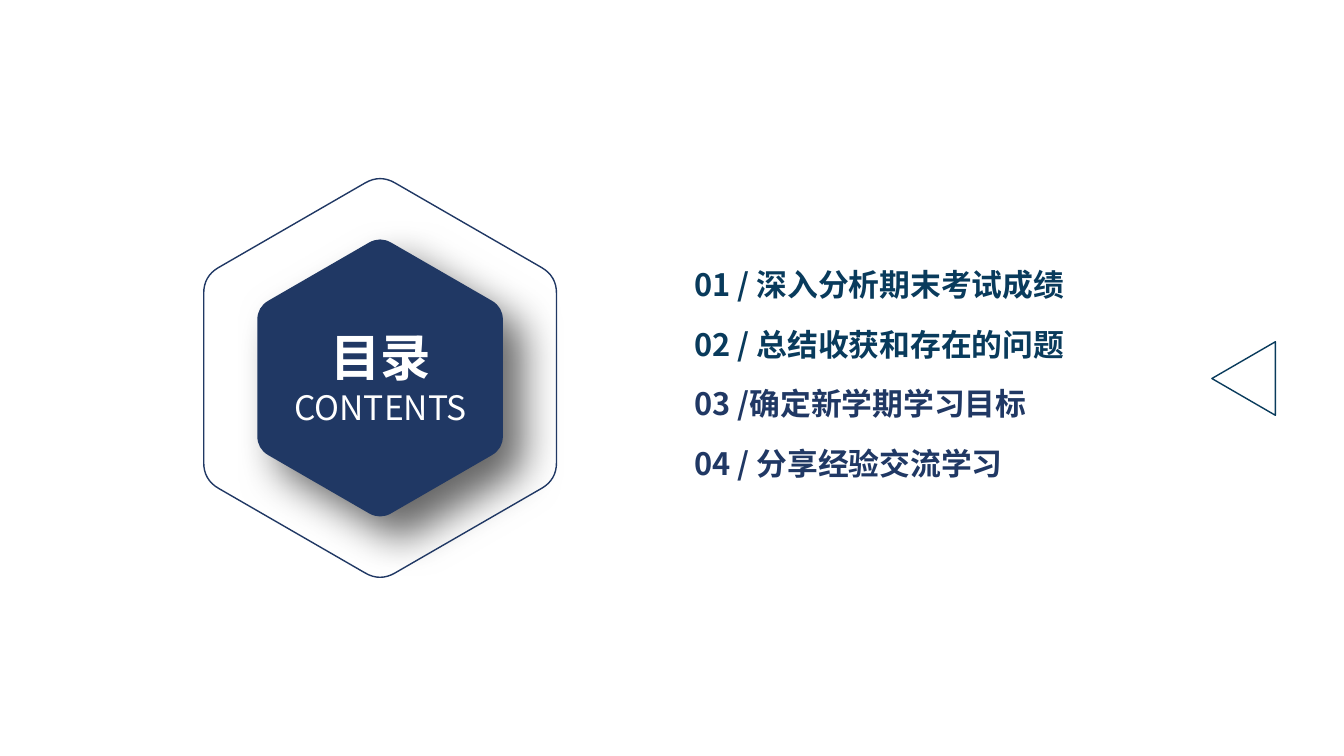
"""Build a contents slide with a hexagon badge and four numbered topics."""
from math import cos, radians, sin

from lxml.etree import SubElement
from pptx import Presentation
from pptx.dml.color import RGBColor
from pptx.enum.shapes import MSO_SHAPE
from pptx.enum.text import MSO_AUTO_SIZE, PP_ALIGN
from pptx.oxml.ns import qn
from pptx.util import Pt

PX = 9144
FONT = "Noto Sans CJK SC"
COLORS = {"navy": "203864", "teal": "093B5C", "white": "FFFFFF", "black": "000000"}
TOPICS = [
    ("01 / 深入分析期末考试成绩", 408, "teal"),
    ("02 / 总结收获和存在的问题", 558, "teal"),
    ("03 /确定新学期学习目标", 397, "navy"),
    ("04 / 分享经验交流学习", 408, "navy"),
]


def color(name):
    return RGBColor.from_string(COLORS[name])


def add_text(slide, box, lines, align=PP_ALIGN.LEFT):
    shape = slide.shapes.add_textbox(*(length * PX for length in box))
    frame = shape.text_frame
    frame.word_wrap = True
    frame.auto_size = MSO_AUTO_SIZE.SHAPE_TO_FIT_TEXT
    for index, (text, size, bold, color_name) in enumerate(lines):
        paragraph = frame.add_paragraph() if index else frame.paragraphs[0]
        paragraph.text = text
        paragraph.alignment = align
        font = paragraph.font
        font.name, font.size, font.bold = FONT, Pt(size), bold
        font.color.rgb = color(color_name)
        properties = paragraph._p.pPr.find(qn("a:defRPr"))
        SubElement(properties, qn("a:ea"), typeface=FONT)


def style_outline(shape, line_name, width, fill_name=None):
    shape.shadow.inherit = False
    shape.line.color.rgb = color(line_name)
    shape.line.width = Pt(width)
    if fill_name:
        shape.fill.solid()
        shape.fill.fore_color.rgb = color(fill_name)
    else:
        shape.fill.background()


def toward(start, end, share):
    return tuple(a + (b - a) * share for a, b in zip(start, end))


def curve_corners(shape):
    outline = next(shape._element.iter(qn("a:path")))
    segments = outline.findall(qn("a:lnTo"))
    for first in range(0, len(segments), 4):
        curve = outline.makeelement(qn("a:cubicBezTo"))
        segments[first].addprevious(curve)
        for segment in segments[first:first + 3]:
            curve.append(segment[0])
            outline.remove(segment)


def add_hexagon(slide, center, radius, trim):
    angles = [radians(60 * corner - 90) for corner in range(6)]
    corners = [(center[0] + radius * cos(a), center[1] + radius * sin(a)) for a in angles]
    points = []
    for index, corner in enumerate(corners):
        before, after = corners[index - 1], corners[(index + 1) % 6]
        share = trim / radius
        points += [
            toward(corner, before, share), toward(corner, before, share / 3),
            toward(corner, after, share / 3), toward(corner, after, share),
        ]
    points = [(round(x * PX), round(y * PX)) for x, y in points]
    builder = slide.shapes.build_freeform(*points[0])
    builder.add_line_segments(points[1:], close=True)
    shape = builder.convert_to_shape()
    curve_corners(shape)
    return shape


def add_shadow(shape, blur, distance, angle, opacity):
    effects = shape._element.spPr.find(qn("a:effectLst"))
    shadow = SubElement(
        effects, qn("a:outerShdw"), blurRad=str(Pt(blur)), dist=str(Pt(distance)),
        dir=str(angle * 60000), algn="tl", rotWithShape="0",
    )
    tint = SubElement(shadow, qn("a:srgbClr"), val=COLORS["black"])
    SubElement(tint, qn("a:alpha"), val=str(opacity * 1000))


def add_triangle(slide, box):
    shape = slide.shapes.add_shape(
        MSO_SHAPE.ISOSCELES_TRIANGLE, *(length * PX for length in box)
    )
    shape.rotation = 270
    style_outline(shape, "teal", 1)


def main():
    presentation = Presentation()
    presentation.slide_width, presentation.slide_height = 1333 * PX, 750 * PX
    slide = presentation.slides.add_slide(presentation.slide_layouts[6])

    for row, (text, width, color_name) in enumerate(TOPICS):
        add_text(slide, (679, 259 + 59 * row, width, 47), [(text, 22, True, color_name)])

    badge = add_hexagon(slide, (377, 375), 139, 12)
    style_outline(badge, "navy", 2, "navy")
    add_shadow(badge, blur=30, distance=20, angle=45, opacity=60)
    ring = add_hexagon(slide, (377, 375), 202, 17)
    style_outline(ring, "navy", 1)

    title = [("目录", 36, True, "white"), ("CONTENTS", 24, False, "white")]
    add_text(slide, (256, 319, 243, 111), title, PP_ALIGN.CENTER)
    add_triangle(slide, (1197, 344, 73, 63))
    presentation.save("out.pptx")


if __name__ == "__main__":
    main()
